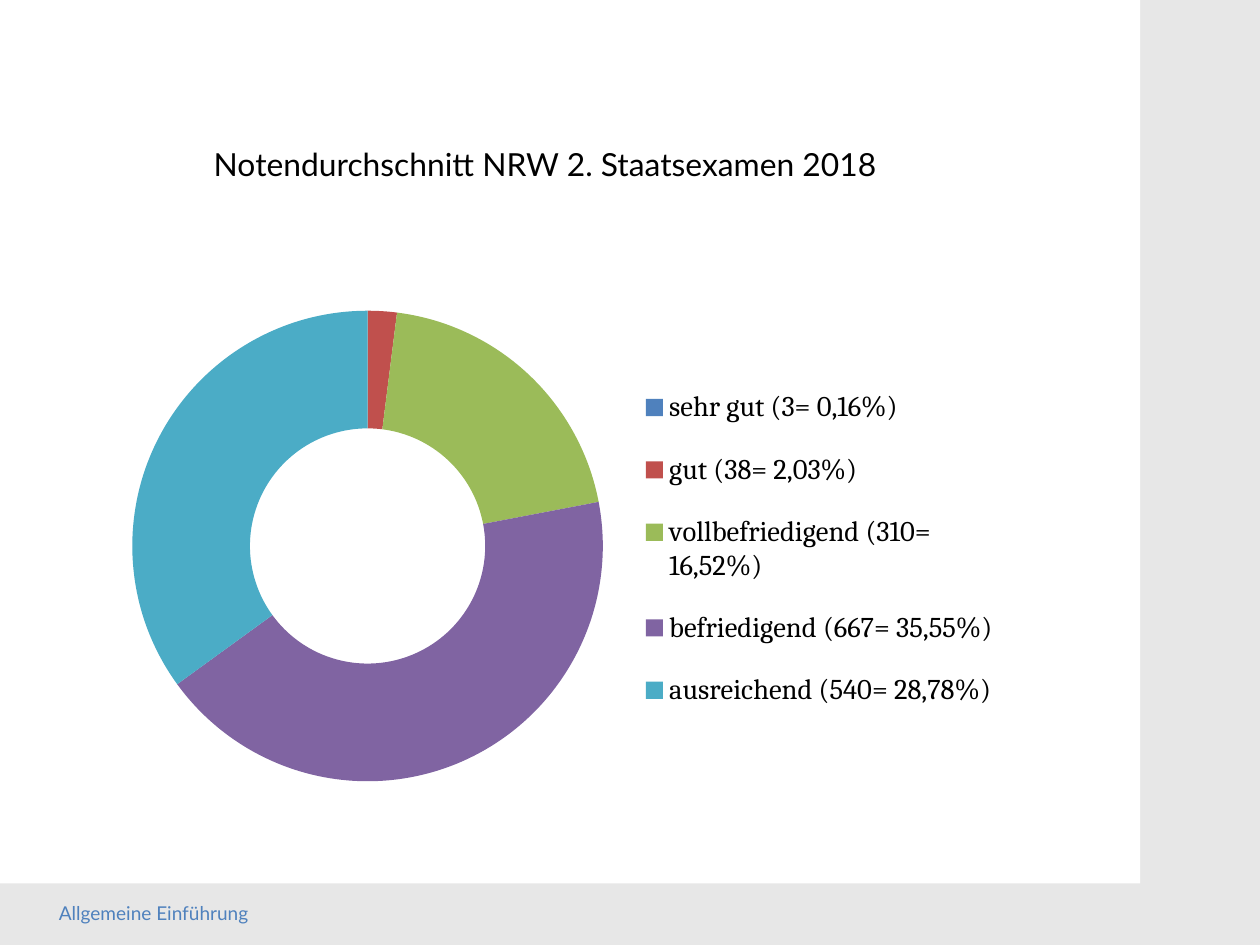
from dataclasses import dataclass

from lxml.etree import SubElement
from pptx import Presentation
from pptx.chart.data import CategoryChartData
from pptx.dml.color import RGBColor
from pptx.enum.chart import XL_CHART_TYPE, XL_LEGEND_POSITION
from pptx.enum.shapes import MSO_SHAPE
from pptx.enum.text import MSO_AUTO_SIZE
from pptx.oxml.ns import qn
from pptx.util import Cm, Pt


@dataclass(frozen=True)
class Theme:
    background: str = "E7E7E7"
    panel: str = "FFFFFF"
    text: str = "000000"
    accent: str = "4F81BD"
    slices: tuple = ("4F81BD", "C0504D", "9BBB59", "8064A2", "4BACC6")
    text_font: str = "Lato"
    chart_font: str = "Cambria"
    title_size: int = 20
    legend_size: int = 18
    footer_size: int = 12


THEME = Theme()

# Grade with count and share of all candidates, and share of those who passed
GRADES = {
    "sehr gut (3= 0,16%)": 0,
    "gut (38= 2,03%)": 2,
    "vollbefriedigend (310= 16,52%)": 20,
    "befriedigend (667= 35,55%)": 43,
    "ausreichend (540= 28,78%)": 35,
}


def set_fill(fill, color):
    fill.solid()
    fill.fore_color.rgb = RGBColor.from_string(color)


def style_font(font, name, size, color):
    font.name = name
    font.size = Pt(size)
    font.color.rgb = RGBColor.from_string(color)


def add_panel(s, left, top, width, height):
    sp = s.shapes.add_shape(MSO_SHAPE.RECTANGLE, left, top, width, height)
    sp.shadow.inherit = False
    set_fill(sp.fill, THEME.panel)
    sp.line.fill.background()


def add_text(s, text, left, top, width, height, size, color, wrap=True):
    tf = s.shapes.add_textbox(left, top, width, height).text_frame
    tf.word_wrap = wrap
    tf.auto_size = MSO_AUTO_SIZE.SHAPE_TO_FIT_TEXT
    r = tf.paragraphs[0].add_run()
    r.text = text
    style_font(r.font, THEME.text_font, size, color)


def set_layout(element, x, y, w, h, inner=False):
    """Place a plot area or legend by fractions of the chart's size."""
    for old in element.findall(qn("c:layout")):
        element.remove(old)
    layout = SubElement(element, qn("c:layout"))
    manual = SubElement(layout, qn("c:manualLayout"))
    settings = [("layoutTarget", "inner")] if inner else []
    settings += [("xMode", "edge"), ("yMode", "edge"),
                 ("x", x), ("y", y), ("w", w), ("h", h)]
    for tag, value in settings:
        SubElement(manual, qn(f"c:{tag}")).set("val", str(value))
    position = element.find(qn("c:legendPos"))
    if position is None:
        element.insert(0, layout)
    else:
        position.addnext(layout)


def add_grade_doughnut(s, left, top, width, height):
    data = CategoryChartData()
    data.categories = list(GRADES)
    data.add_series("Series 1", list(GRADES.values()))
    chart = s.shapes.add_chart(
        XL_CHART_TYPE.DOUGHNUT, left, top, width, height, data).chart
    chart.has_title = False
    style_font(chart.font, THEME.chart_font, THEME.legend_size, THEME.text)

    chart.has_legend = True
    legend = chart.legend
    legend.position = XL_LEGEND_POSITION.RIGHT
    legend.include_in_layout = False
    style_font(legend.font, THEME.chart_font, THEME.legend_size, THEME.text)

    plot = chart.plots[0]
    plot.vary_by_categories = True
    for i, color in enumerate(THEME.slices):
        point_format = plot.series[0].points[i].format
        set_fill(point_format.fill, color)
        point_format.line.fill.background()

    root = chart.element
    next(root.iter(qn("c:holeSize"))).set("val", "50")
    set_layout(next(root.iter(qn("c:plotArea"))), 0.01, 0.06, 0.56, 0.83, inner=True)
    set_layout(next(root.iter(qn("c:legend"))), 0.61, 0.15, 0.39, 0.66)


def main():
    prs = Presentation()
    prs.slide_width, prs.slide_height = Cm(28), Cm(21)
    s = prs.slides.add_slide(prs.slide_layouts[6])
    set_fill(s.background.fill, THEME.background)

    add_panel(s, 0, 0, Cm(25.34), Cm(19.63))
    add_text(s, "Notendurchschnitt NRW 2. Staatsexamen 2018",
             Cm(4.5), Cm(3.1), Cm(15.8), Cm(1.11), THEME.title_size, THEME.text)
    add_grade_doughnut(s, Cm(2.34), Cm(6.15), Cm(20.1), Cm(12.6))
    add_text(s, "Allgemeine Einführung",
             Cm(1.06), Cm(19.9), Cm(4.72), Cm(0.76),
             THEME.footer_size, THEME.accent, wrap=False)
    prs.save("out.pptx")


if __name__ == "__main__":
    main()
